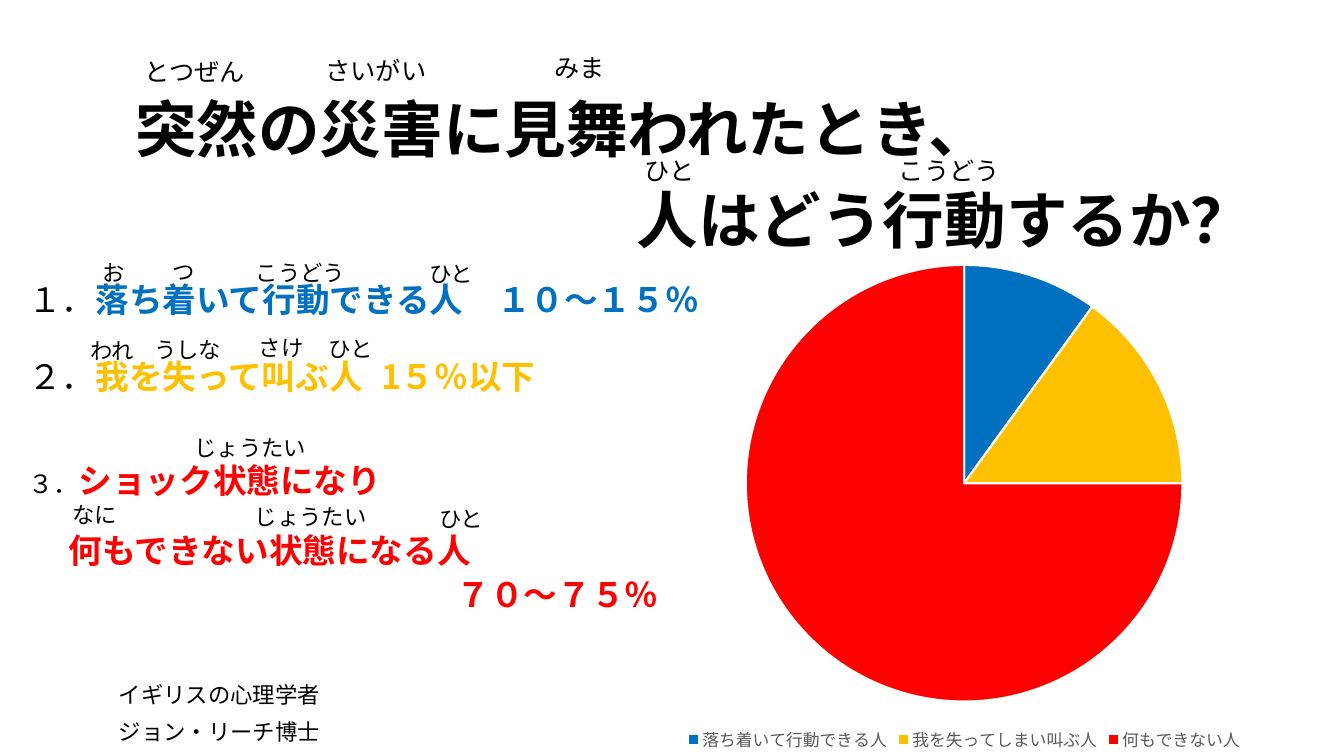
import dataclasses
from typing import Any

import pptx
import pptx.chart.data
import pptx.dml.color
import pptx.enum.chart
import pptx.enum.text
import pptx.oxml
import pptx.oxml.ns
import pptx.util

Pt = pptx.util.Pt
Align = pptx.enum.text.PP_ALIGN
FONT = "Noto Sans CJK JP"
BLACK, BLUE, YELLOW, RED, GREY, WHITE = (
    "000000", "0070C0", "FFC000", "FF0000", "595959", "FFFFFF")
RUBY_LINE = 56


@dataclasses.dataclass
class Ruby:
    text: str
    x: float
    y: float
    w: float = 54
    size: int = 16


@dataclasses.dataclass
class Item:
    """One line of the list, with an optional number in front."""
    text: str
    color: str
    before: float = 0
    number: str = ""
    number_size: int = 24
    indent: float = 0
    tab: float = 0


@dataclasses.dataclass
class Slice:
    name: str
    value: int
    color: str


RUBIES = [
    Ruby("とつぜん", 96.5, 5.8, 91, 18),
    Ruby("さいがい", 225.4, 5, 91, 18),
    Ruby("みま", 388.8, 2.9, 91, 18),
    Ruby("ひと", 453.6, 76.3, 91, 18),
    Ruby("こうどう", 635, 76.3, 91, 18),
    Ruby("お", 66.2, 148.3),
    Ruby("つ", 115.9, 147.6),
    Ruby("こうどう", 175.7, 148.3, 91),
    Ruby("ひと", 299.5, 149),
    Ruby("われ", 57.6, 203.8),
    Ruby("うしな", 103, 203, 63),
    Ruby("さけ", 177.8, 201.6),
    Ruby("ひと", 227.5, 202.3),
    Ruby("じょうたい", 131.8, 273.6, 97),
    Ruby("なに", 44.6, 321.1, 97),
    Ruby("じょうたい", 175, 322.6, 97),
    Ruby("ひと", 306.7, 324),
]

ITEMS = [
    Item("落ち着いて行動できる人　１０～１５％", BLUE, 0, "１．"),
    Item("我を失って叫ぶ人\t1５％以下", YELLOW, 31, "２．", tab=369),
    Item("ショック状態になり", RED, 50, "３．", 18),
    Item("何もできない状態になる人", RED, 26, indent=29),
    Item("７０～７５％", RED, 7, indent=306),
]

SLICES = [
    Slice("落ち着いて行動できる人", 10, BLUE),
    Slice("我を失ってしまい叫ぶ人", 15, YELLOW),
    Slice("何もできない人", 75, RED),
]


def rgb(color: str) -> pptx.dml.color.RGBColor:
    return pptx.dml.color.RGBColor.from_string(color)


def add_xml(parent: Any, tag: str, **attrs: str) -> Any:
    child = pptx.oxml.parse_xml(f"<a:{tag} {pptx.oxml.ns.nsdecls('a')}/>")
    for key, value in attrs.items():
        child.set(key, value)
    parent.append(child)
    return child


def set_font(font: Any, size: float, color: str = BLACK, bold: bool = False) -> None:
    font.size, font.bold, font.name = Pt(size), bold, FONT
    font.color.rgb = rgb(color)
    add_xml(font._element, "ea", typeface=FONT)


def set_frame(sp: Any, x: float, y: float, w: float, h: float, top: float) -> Any:
    """Place a text shape and return its top-anchored, wrapping text frame."""
    sp.left, sp.top, sp.width, sp.height = Pt(x), Pt(y), Pt(w), Pt(h)
    tf = sp.text_frame
    tf.word_wrap = True
    tf.auto_size = pptx.enum.text.MSO_AUTO_SIZE.NONE
    tf.vertical_anchor = pptx.enum.text.MSO_ANCHOR.TOP
    tf.margin_left = tf.margin_right = Pt(7.2)
    tf.margin_top, tf.margin_bottom = Pt(top), 0
    return tf


def next_paragraph(tf: Any, first: bool, line: float, before: float = 0) -> Any:
    p = tf.paragraphs[0] if first else tf.add_paragraph()
    p.alignment = Align.LEFT
    p.line_spacing, p.space_before = Pt(line), Pt(before)
    return p


def add_lines(tf: Any, lines: list[str], size: float, line: float,
              before: float = 0, bold: bool = False) -> None:
    for i, text in enumerate(lines):
        p = next_paragraph(tf, i == 0, line, before if i else 0)
        p.add_run().text = text
        set_font(p.font, size, bold=bold)


def add_items(tf: Any) -> None:
    for i, item in enumerate(ITEMS):
        p = next_paragraph(tf, i == 0, 24, item.before)
        pPr = p._p.get_or_add_pPr()
        pPr.set("marL", str(Pt(item.indent)))
        pPr.set("indent", "0")
        add_xml(pPr, "buNone")
        if item.tab:
            add_xml(add_xml(pPr, "tabLst"), "tab", pos=str(Pt(item.tab)), algn="l")
        if item.number:
            r = p.add_run()
            r.text = item.number
            set_font(r.font, item.number_size)
        r = p.add_run()
        r.text = item.text
        set_font(r.font, 24, item.color, True)


def add_pie(s: Any) -> None:
    data = pptx.chart.data.CategoryChartData()
    data.categories = [part.name for part in SLICES]
    data.add_series("Series 1", [part.value for part in SLICES])
    chart = s.shapes.add_chart(pptx.enum.chart.XL_CHART_TYPE.PIE, Pt(421.9),
                               Pt(179.3), Pt(533.5), Pt(360.7), data).chart
    set_font(chart.font, 10)
    chart.has_title = False
    chart.has_legend = True
    chart.legend.position = pptx.enum.chart.XL_LEGEND_POSITION.BOTTOM
    chart.legend.include_in_layout = False
    set_font(chart.legend.font, 12, GREY)
    plot = chart.plots[0]
    plot.vary_by_categories = True
    for i, part in enumerate(SLICES):
        fmt = plot.series[0].points[i].format
        fmt.fill.solid()
        fmt.fill.fore_color.rgb = rgb(part.color)
        fmt.line.color.rgb = rgb(WHITE)
        fmt.line.width = Pt(1.5)


def main() -> None:
    prs = pptx.Presentation()
    prs.slide_width, prs.slide_height = Pt(960), Pt(540)
    s = prs.slides.add_slide(prs.slide_layouts[1])
    title, body = s.placeholders

    tf = set_frame(title, 89.3, 55.4, 813, 150, 7)
    add_lines(tf, ["突然の災害に見舞われたとき、", "人はどう行動するか？"], 44, 55, 10, True)
    tf.paragraphs[1].alignment = Align.RIGHT

    add_pie(s)
    s.shapes._spTree.append(body._element)  # the list lies over the chart area
    add_items(set_frame(body, 13, 184.3, 543, 291, 20))

    credit = s.shapes.add_textbox(0, 0, 0, 0)
    add_lines(set_frame(credit, 77.8, 464.4, 204, 75, 24),
              ["イギリスの心理学者", "ジョン・リーチ博士"], 16, 17, 10)

    for ruby in RUBIES:
        sp = s.shapes.add_textbox(0, 0, 0, 0)
        tf = set_frame(sp, ruby.x, ruby.y, ruby.w, RUBY_LINE, 0)
        add_lines(tf, [ruby.text], ruby.size, RUBY_LINE)
    prs.save("out.pptx")


if __name__ == "__main__":
    main()
